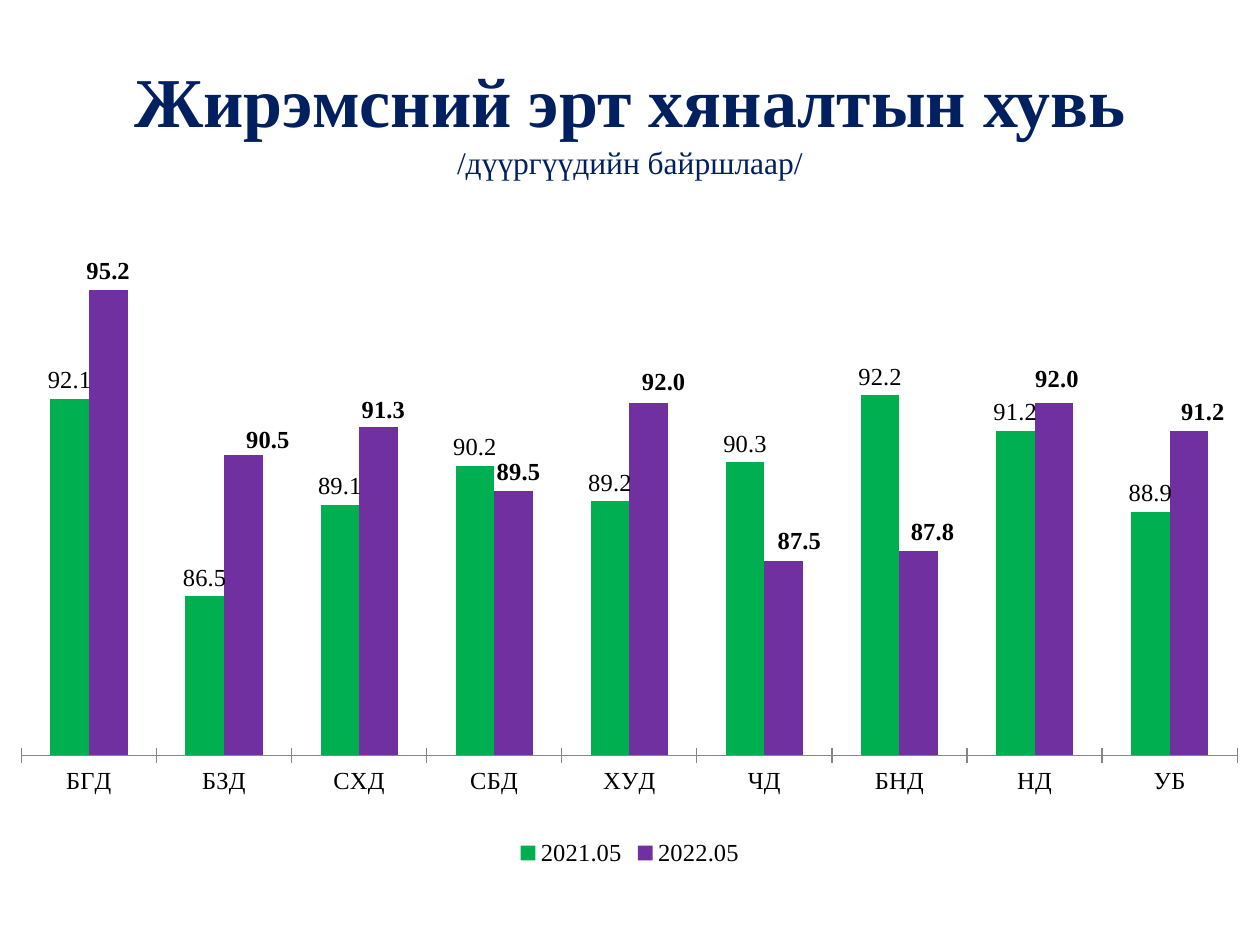
from lxml import etree
from pptx import Presentation
from pptx.chart.data import CategoryChartData
from pptx.dml.color import RGBColor
from pptx.enum.chart import XL_CHART_TYPE, XL_LABEL_POSITION, XL_LEGEND_POSITION, XL_TICK_MARK
from pptx.enum.text import MSO_ANCHOR, MSO_AUTO_SIZE, PP_ALIGN
from pptx.oxml.ns import qn
from pptx.util import Inches, Pt

COLUMNS = XL_CHART_TYPE.COLUMN_CLUSTERED
OUTSIDE = XL_LABEL_POSITION.OUTSIDE_END
BOTTOM = XL_LEGEND_POSITION.BOTTOM
CROSS, NO_TICK = XL_TICK_MARK.CROSS, XL_TICK_MARK.NONE
MIDDLE, CENTER = MSO_ANCHOR.MIDDLE, PP_ALIGN.CENTER
NO_FIT = MSO_AUTO_SIZE.NONE

NAVY = RGBColor(0x00, 0x20, 0x60)
GREEN = RGBColor(0x00, 0xB0, 0x50)
PURPLE = RGBColor(0x70, 0x30, 0xA0)
BLACK = RGBColor(0x00, 0x00, 0x00)
GRAY = RGBColor(0x86, 0x86, 0x86)

DISTRICTS = ["БГД", "БЗД", "СХД", "СБД", "ХУД", "ЧД", "БНД", "НД", "УБ"]
# Name, colour, bold labels, values
YEARS = [
    ("2021.05", GREEN, False, [92.1, 86.5, 89.1, 90.2, 89.2, 90.3, 92.2, 91.2, 88.9]),
    ("2022.05", PURPLE, True, [95.2, 90.5, 91.3, 89.5, 92.0, 87.5, 87.8, 92.0, 91.2]),
]
# Label shifts of the second year, in percent of the chart's width and height
LABEL_SHIFTS = {1: (1.95, 0.5), 2: (0.4, 0.3), 3: (0.4, 0), 4: (1.2, -0.3),
                5: (1.25, -0.2), 6: (1.1, 0), 7: (0.25, -0.8), 8: (1.1, 0)}


def manual_layout(**settings):
    layout = etree.Element(qn("c:layout"))
    manual = etree.SubElement(layout, qn("c:manualLayout"))
    for name, value in settings.items():
        etree.SubElement(manual, qn("c:" + name)).set("val", str(value))
    return layout


class SlideBuilder:
    font_name = "Times New Roman"
    number_format = "0.0"
    chart_size = Pt(14)

    def __init__(self, slide):
        self.slide = slide

    def style(self, font, size, color, bold=False):
        font.name, font.size, font.bold = self.font_name, size, bold
        font.color.rgb = color

    def title(self, spans, left, top, width, height):
        box = self.slide.shapes.title
        box.left, box.top, box.width, box.height = map(Inches, (left, top, width, height))
        frame = box.text_frame
        frame.word_wrap, frame.auto_size, frame.vertical_anchor = True, NO_FIT, MIDDLE
        para = frame.paragraphs[0]
        para.alignment = CENTER
        for text, size, bold in spans:
            span = para.add_run()
            span.text = text
            self.style(span.font, Pt(size), NAVY, bold)

    def column_chart(self, categories, series_rows, left, top, width, height):
        data = CategoryChartData(number_format=self.number_format)
        data.categories = categories
        for name, _, _, values in series_rows:
            data.add_series(name, values)
        chart = self.slide.shapes.add_chart(
            COLUMNS, *map(Inches, (left, top, width, height)), data).chart
        self.style(chart.font, self.chart_size, BLACK)
        chart.has_title = False
        chart.has_legend = True
        chart.legend.position = BOTTOM
        chart.legend.include_in_layout = False

        # Axes
        districts, percent = chart.category_axis, chart.value_axis
        districts.major_tick_mark, districts.minor_tick_mark = CROSS, NO_TICK
        districts.format.line.color.rgb = GRAY
        percent.minimum_scale, percent.maximum_scale = 82, 96
        percent.has_major_gridlines = False
        percent.visible = False

        # Columns and their labels
        plot = chart.plots[0]
        plot.gap_width, plot.overlap, plot.vary_by_categories = 150, 0, False
        for series, (_, color, bold, _) in zip(plot.series, series_rows):
            series.format.fill.solid()
            series.format.fill.fore_color.rgb = color
            labels = series.data_labels
            labels.show_value = True
            labels.position = OUTSIDE
            labels.number_format = self.number_format
            labels.number_format_is_linked = False
            self.style(labels.font, self.chart_size, BLACK, bold)

        # Plot area
        area = chart.element.find(".//" + qn("c:plotArea"))
        for old in area.findall(qn("c:layout")):
            area.remove(old)
        area.insert(0, manual_layout(layoutTarget="inner", xMode="edge", yMode="edge",
                                     x=0.017, y=0.031, w=0.965, h=0.784))
        return chart

    def shift_labels(self, series, shifts):
        for index in shifts:
            label = series.points[index].data_label
            self.style(label.font, self.chart_size, BLACK, True)
            label.position = OUTSIDE
        for element in series.data_labels._element.findall(qn("c:dLbl")):
            mark = element.find(qn("c:idx"))
            across, down = shifts[int(mark.get("val"))]
            number = etree.Element(qn("c:numFmt"), formatCode=self.number_format, sourceLinked="0")
            mark.addnext(number)
            mark.addnext(manual_layout(x=across / 100, y=down / 100))


def main():
    deck = Presentation()
    deck.slide_width, deck.slide_height = Inches(10), Inches(7.5)
    builder = SlideBuilder(deck.slides.add_slide(deck.slide_layouts[5]))

    # Heading
    builder.title([("Жирэмсний эрт хяналтын хувь", 40, True), (" ", 44, False),
                   ("/дүүргүүдийн байршлаар/", 18, False)], 0.5, 0.17, 9, 1.5)

    # Districts by year
    chart = builder.column_chart(DISTRICTS, YEARS, 0, 1.92, 10, 5)
    builder.shift_labels(chart.plots[0].series[1], LABEL_SHIFTS)

    deck.save("out.pptx")


if __name__ == "__main__":
    main()
